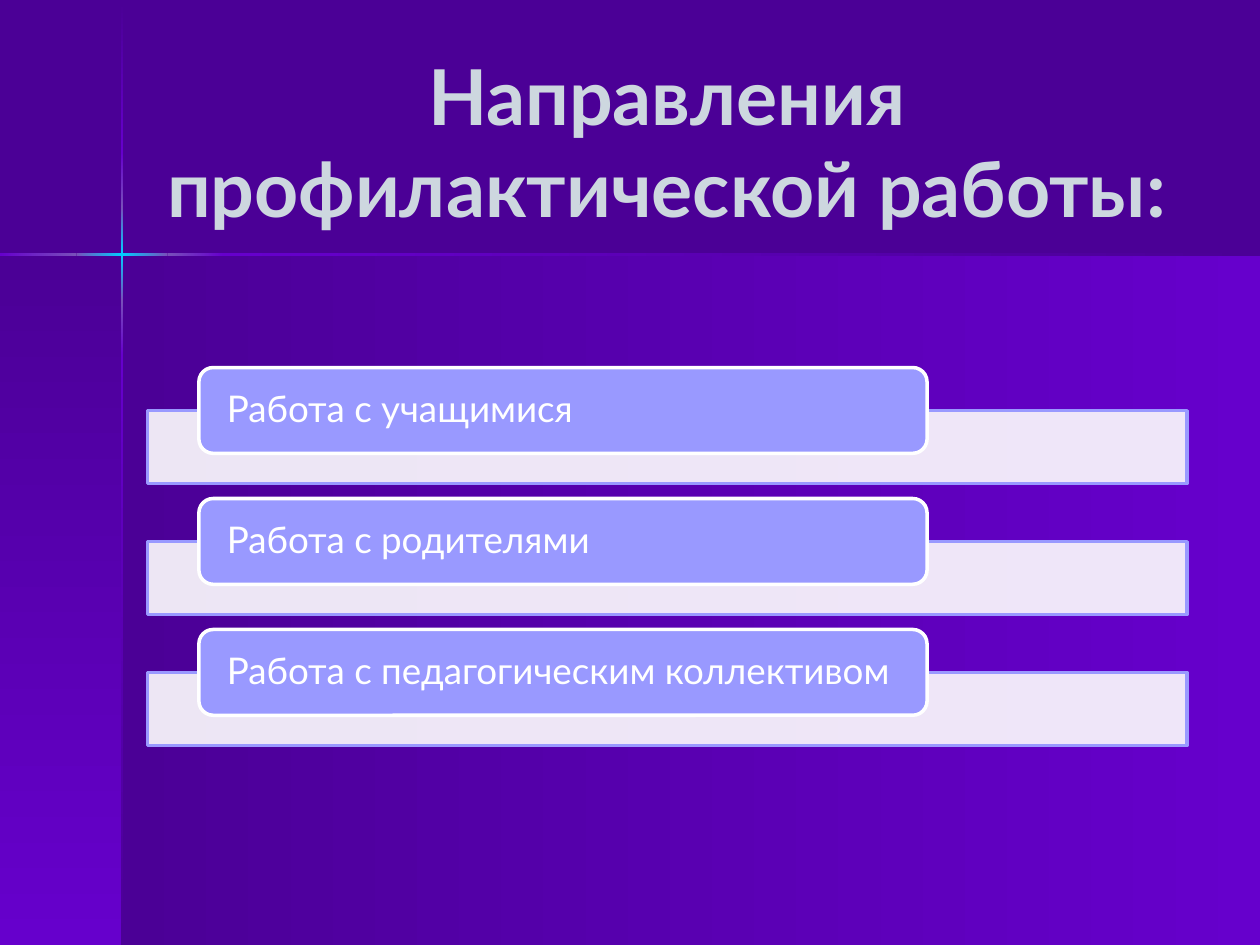
from copy import deepcopy
from itertools import pairwise

from lxml.etree import SubElement
from pptx import Presentation
from pptx.dml.color import RGBColor
from pptx.enum.shapes import MSO_SHAPE as Shape
from pptx.enum.text import MSO_ANCHOR as Anchor, PP_ALIGN as Align
from pptx.oxml.ns import qn
from pptx.util import Cm, Pt

INDIGO = RGBColor(0x4B, 0x00, 0x96)
VIOLET = RGBColor(0x66, 0x00, 0xCC)
HAZE = RGBColor(0x78, 0x50, 0xBA)
CYAN = RGBColor(0x00, 0xCC, 0xFF)
SILVER = RGBColor(0xCD, 0xD7, 0xDF)
LILAC = RGBColor(0x99, 0x99, 0xFF)
WHITE = RGBColor(0xFF, 0xFF, 0xFF)

FONT = "Lato"
WIDTH, HEIGHT = 25.4, 19.05
CROSS_X, CROSS_Y = 2.46, 5.13
BEAM = 0.05
CONTENT_LEFT, CONTENT_WIDTH = 2.97, 20.96
FIRST_ROW, ROW_STEP = 7.41, 2.64
DIRECTIONS = [
    "Работа с учащимися",
    "Работа с родителями",
    "Работа с педагогическим коллективом",
]


def add_box(slide, kind, left, top, width, height):
    shape = slide.shapes.add_shape(kind, Cm(left), Cm(top), Cm(width), Cm(height))
    shape.shadow.inherit = False
    return shape


def add_gradient(slide, left, top, width, height, colors, vertical):
    """Rectangle whose colours run evenly rightwards or downwards."""
    shape = add_box(slide, Shape.RECTANGLE, left, top, width, height)
    shape.line.fill.background()
    shape.fill.gradient()
    shape.fill.gradient_angle = 270 if vertical else 0
    stop_list = shape._element.spPr.find(qn("a:gradFill")).find(qn("a:gsLst"))
    while len(stop_list) < len(colors):
        stop_list.append(deepcopy(stop_list[0]))
    for index, (stop, color) in enumerate(zip(shape.fill.gradient_stops, colors)):
        stop.position = index / (len(colors) - 1)
        stop.color.rgb = color


def add_outlined(slide, kind, left, top, width, height, fill, line):
    shape = add_box(slide, kind, left, top, width, height)
    shape.fill.solid()
    shape.fill.fore_color.rgb = fill
    shape.line.color.rgb = line
    shape.line.width = Pt(2)
    return shape


def set_opacity(shape, percent):
    color = shape._element.spPr.find(qn("a:solidFill"))[0]
    SubElement(color, qn("a:alpha")).set("val", str(percent * 1000))


def write_text(shape, text, size, color, align, bold=False):
    frame = shape.text_frame
    frame.word_wrap = True
    frame.vertical_anchor = Anchor.MIDDLE
    paragraph = frame.paragraphs[0]
    paragraph.alignment = align
    run = paragraph.add_run()
    run.text = text
    run.font.name = FONT
    run.font.size = Pt(size)
    run.font.bold = bold
    run.font.color.rgb = color
    return paragraph


def add_backdrop(slide):
    # Panels to the right of and under the crossing
    panel_height = HEIGHT - CROSS_Y
    add_gradient(slide, CROSS_X, CROSS_Y, WIDTH - CROSS_X, panel_height,
                 [INDIGO, VIOLET], False)
    add_gradient(slide, 0, CROSS_Y, CROSS_X, panel_height, [INDIGO, VIOLET], True)

    # Glowing beams, brightest where they cross
    glow = [[INDIGO, VIOLET], [VIOLET, HAZE], [HAZE, CYAN, HAZE],
            [HAZE, VIOLET], [VIOLET, INDIGO]]
    column_edges = [0.03, 3.07, 4.19, 6.05, 7.16, HEIGHT]
    row_edges = [0, 1.54, 3.38, 4.5, WIDTH]
    for (start, end), colors in zip(pairwise(column_edges), glow):
        add_gradient(slide, CROSS_X - BEAM / 2, start, BEAM, end - start, colors, True)
    for (start, end), colors in zip(pairwise(row_edges), glow[1:]):
        add_gradient(slide, start, CROSS_Y - BEAM / 2, end - start, BEAM, colors, False)


def add_title(slide, text):
    box = slide.shapes.add_textbox(Cm(CONTENT_LEFT), Cm(0.84), Cm(CONTENT_WIDTH), Cm(3.99))
    write_text(box, text, 44, SILVER, Align.CENTER, bold=True)


def add_direction(slide, top, text):
    bar = add_outlined(slide, Shape.RECTANGLE, CONTENT_LEFT, top + 0.87,
                       CONTENT_WIDTH, 1.47, WHITE, LILAC)
    set_opacity(bar, 90)
    label = add_outlined(slide, Shape.ROUNDED_RECTANGLE, 4.01, top,
                         14.68, 1.73, LILAC, WHITE)
    frame = label.text_frame
    frame.margin_left = frame.margin_right = Cm(0.48)
    frame.margin_top = frame.margin_bottom = 0
    paragraph = write_text(label, text, 21, WHITE, Align.LEFT)
    paragraph.line_spacing = 0.9


def main():
    presentation = Presentation()
    presentation.slide_width = Cm(WIDTH)
    presentation.slide_height = Cm(HEIGHT)
    slide = presentation.slides.add_slide(presentation.slide_layouts[6])
    slide.background.fill.solid()
    slide.background.fill.fore_color.rgb = INDIGO

    add_backdrop(slide)
    add_title(slide, "Направления профилактической работы:")
    for index, text in enumerate(DIRECTIONS):
        add_direction(slide, FIRST_ROW + index * ROW_STEP, text)

    presentation.save("out.pptx")


if __name__ == "__main__":
    main()
